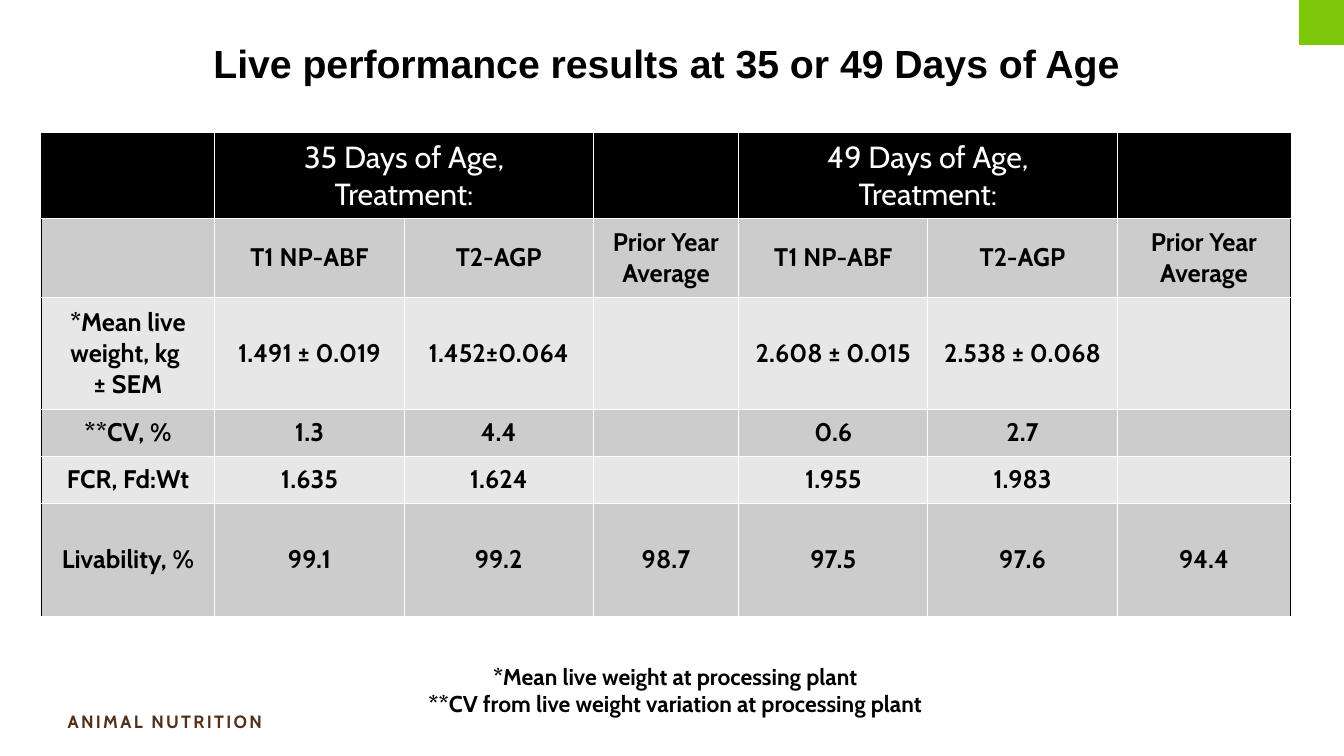
"""Build the live performance results slide."""
from dataclasses import dataclass

from lxml import etree
from pptx import Presentation
from pptx.dml.color import RGBColor
from pptx.enum.shapes import MSO_SHAPE
from pptx.enum.text import MSO_ANCHOR, PP_ALIGN
from pptx.oxml.ns import qn
from pptx.slide import Slide
from pptx.table import Table, _Cell
from pptx.text.text import TextFrame
from pptx.util import Inches, Pt

BLACK = RGBColor(0x00, 0x00, 0x00)
WHITE = RGBColor(0xFF, 0xFF, 0xFF)
GREEN = RGBColor(0x7E, 0xC6, 0x0A)
BROWN = RGBColor(0x53, 0x30, 0x19)
DARK_BAND = RGBColor(0xCC, 0xCC, 0xCC)
LIGHT_BAND = RGBColor(0xE7, 0xE7, 0xE7)
RECTANGLE = MSO_SHAPE.RECTANGLE
CENTER = PP_ALIGN.CENTER
LEFT = PP_ALIGN.LEFT
MIDDLE = MSO_ANCHOR.MIDDLE

COLUMN_WIDTHS = [1.9, 2.07, 2.07, 1.59, 2.07, 2.07, 1.9]
ROW_HEIGHTS = [0.9, 0.86, 1.23, 0.51, 0.52, 1.23]
TREATMENTS = ["T1 NP-ABF", "T2-AGP", "Prior Year\nAverage"]
ROWS = [
    ["", "35 Days of Age,\nTreatment:", "", "", "49 Days of Age,\nTreatment:", "", ""],
    ["", *TREATMENTS, *TREATMENTS],
    ["*Mean live weight, kg \n± SEM", "1.491 ± 0.019", "1.452±0.064", "",
     "2.608 ± 0.015", "2.538 ± 0.068", ""],
    ["**CV, %", "1.3", "4.4", "", "0.6", "2.7", ""],
    ["FCR, Fd:Wt", "1.635", "1.624", "", "1.955", "1.983", ""],
    ["Livability, %", "99.1", "99.2", "98.7", "97.5", "97.6", "94.4"],
]
MERGED_COLUMNS = [1, 4]


@dataclass(frozen=True)
class TextStyle:
    size: float
    color: RGBColor = BLACK
    bold: bool = True
    font: str = "Cabin"
    align: PP_ALIGN = CENTER
    spacing: int = 0


@dataclass(frozen=True)
class Label:
    text: str
    left: float
    top: float
    width: float
    height: float
    style: TextStyle
    inset: bool = True
    wrap: bool = True


HEADER_STYLE = TextStyle(24, WHITE, bold=False)
BODY_STYLE = TextStyle(20)
LABELS = [
    Label("ANIMAL NUTRITION", 0.74, 7.77, 2.45, 0.24,
          TextStyle(14, BROWN, align=LEFT, spacing=180), inset=False),
    Label("Live performance results at 35 or 49 Days of Age", 1.84, 0.38, 10.9, 0.62,
          TextStyle(30.9, font="Arial")),
    Label("*Mean live weight at processing plant\n"
          "**CV from live weight variation at processing plant",
          4.27, 7.2, 6.23, 0.71, TextStyle(18), wrap=False),
]


def write_text(frame: TextFrame, text: str, style: TextStyle) -> None:
    """Write each line of text as one styled paragraph."""
    for index, line in enumerate(text.split("\n")):
        para = frame.add_paragraph() if index else frame.paragraphs[0]
        para.alignment = style.align
        span = para.add_run()
        span.text = line
        span.font.size = Pt(style.size)
        span.font.name = style.font
        span.font.bold = style.bold
        span.font.color.rgb = style.color
        if style.spacing:
            span.font._element.set("spc", str(style.spacing))


def add_label(page: Slide, label: Label) -> None:
    """Add a text box to the page."""
    box = page.shapes.add_textbox(Inches(label.left), Inches(label.top),
                                  Inches(label.width), Inches(label.height))
    frame = box.text_frame
    frame.word_wrap = label.wrap
    if not label.inset:
        frame.margin_left = frame.margin_right = Inches(0)
        frame.margin_top = frame.margin_bottom = Inches(0)
    write_text(frame, label.text, label.style)


def set_borders(cell: _Cell, row: int, column: int) -> None:
    """Draw white inner borders and black outer borders."""
    outer_edges = {
        "a:lnL": column == 0,
        "a:lnR": column == len(COLUMN_WIDTHS) - 1,
        "a:lnT": row == 0,
        "a:lnB": False,
    }
    properties = cell._tc.get_or_add_tcPr()
    for tag, outer in outer_edges.items():
        line = etree.SubElement(properties, qn(tag), w=str(Pt(1)))
        fill = etree.SubElement(line, qn("a:solidFill"))
        etree.SubElement(fill, qn("a:srgbClr"), val=str(BLACK if outer else WHITE))


def fill_cell(cell: _Cell, row: int, column: int) -> None:
    """Style one cell and write its value."""
    set_borders(cell, row, column)
    cell.fill.solid()
    cell.fill.fore_color.rgb = BLACK if row == 0 else (DARK_BAND if row % 2 else LIGHT_BAND)
    cell.vertical_anchor = MIDDLE
    cell.margin_left = cell.margin_right = Inches(0.11)
    cell.margin_top = cell.margin_bottom = Inches(0.06)
    if ROWS[row][column]:
        write_text(cell.text_frame, ROWS[row][column], BODY_STYLE if row else HEADER_STYLE)


def add_results_table(page: Slide) -> None:
    """Add the table of results by age and treatment."""
    frame = page.shapes.add_table(len(ROWS), len(COLUMN_WIDTHS), Inches(0.45), Inches(1.46),
                                  Inches(sum(COLUMN_WIDTHS)), Inches(sum(ROW_HEIGHTS)))
    table: Table = frame.table
    for column, width in enumerate(COLUMN_WIDTHS):
        table.columns[column].width = Inches(width)
    for row, height in enumerate(ROW_HEIGHTS):
        table.rows[row].height = Inches(height)
        for column in range(len(COLUMN_WIDTHS)):
            fill_cell(table.cell(row, column), row, column)
    for column in MERGED_COLUMNS:
        table.cell(0, column).merge(table.cell(0, column + 1))


def add_corner(page: Slide) -> None:
    """Add the green square in the top right corner."""
    corner = page.shapes.add_shape(RECTANGLE, Inches(14.21), Inches(0), Inches(0.49), Inches(0.49))
    corner.shadow.inherit = False
    corner.fill.solid()
    corner.fill.fore_color.rgb = GREEN
    corner.line.fill.background()


def main() -> None:
    """Build and save the deck."""
    deck = Presentation()
    deck.slide_width = Inches(14.7)
    deck.slide_height = Inches(8.27)
    page = deck.slides.add_slide(deck.slide_layouts[6])
    add_corner(page)
    add_results_table(page)
    for label in LABELS:
        add_label(page, label)
    deck.save("out.pptx")


if __name__ == "__main__":
    main()
